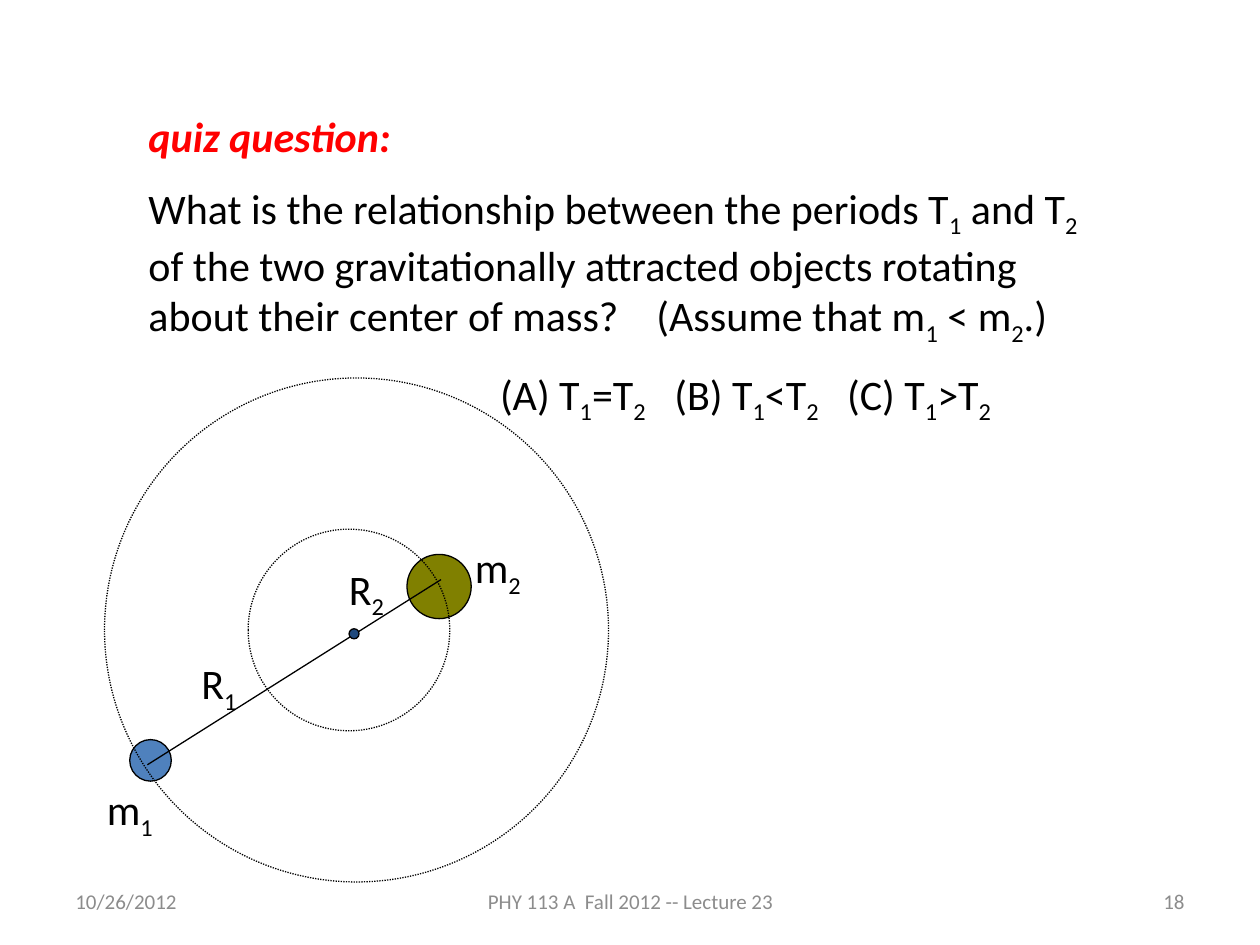
from pptx import Presentation
from pptx.dml.color import RGBColor
from pptx.enum.dml import MSO_LINE
from pptx.enum.shapes import MSO_CONNECTOR, MSO_SHAPE
from pptx.enum.text import MSO_ANCHOR, PP_ALIGN
from pptx.oxml.ns import qn
from pptx.util import Inches, Pt
from lxml import etree

DOTTED = MSO_LINE.ROUND_DOT
ELLIPSE = MSO_SHAPE.OVAL
STRAIGHT = MSO_CONNECTOR.STRAIGHT
TOP, MIDDLE = MSO_ANCHOR.TOP, MSO_ANCHOR.MIDDLE
LEFT, CENTER, RIGHT = PP_ALIGN.LEFT, PP_ALIGN.CENTER, PP_ALIGN.RIGHT

COLORS = {
    "text": "000000", "heading": "FF0000", "footer": "8C8C8C",
    "light_mass": "4F81BD", "heavy_mass": "808000", "center": "1F497D",
}
FONT = "Calibri"
ANSWER_INDENT = 2.79

# An underscore makes the next character a subscript.
HEADING = "quiz question:"
QUESTION = (
    "What is the relationship between the periods T_1 and T_2 of the two "
    "gravitationally attracted objects rotating about their center of mass?"
    "    (Assume that m_1 < m_2.)"
)
ANSWERS = "(A) T_1=T_2   (B) T_1<T_2   (C) T_1>T_2"

FOOTERS = [
    ("10/26/2012", 0.5, 2.33, LEFT),
    ("PHY 113 A  Fall 2012 -- Lecture 23", 3.42, 3.17, CENTER),
    ("18", 7.17, 2.33, RIGHT),
]
MASSES = [(1.03, 5.87, 0.33, "light_mass"), (3.23, 4.4, 0.51, "heavy_mass")]
RADIUS_LINE = (1.17, 6.07, 3.5, 4.6)
ORBITS = [(1.97, 4.2, 1.6), (0.83, 3, 4)]
CENTER_OF_MASS = (2.77, 4.99, 0.08, "center")
LABELS = [("m_1", 0.75, 6.17), ("R_2", 2.67, 4.42),
          ("R_1", 1.5, 5.17), ("m_2", 3.67, 4.25)]


def color(name):
    return RGBColor.from_string(COLORS[name])


def add_text_frame(slide, left, top, width, height, anchor=TOP):
    box = slide.shapes.add_textbox(*map(Inches, (left, top, width, height)))
    frame = box.text_frame
    frame.word_wrap = True
    frame.vertical_anchor = anchor
    return frame


def add_run(paragraph, text, size, color_name, emphasis=False, subscript=False):
    run = paragraph.add_run()
    run.text = text
    font = run.font
    font.name, font.size = FONT, Pt(size)
    font.bold = font.italic = emphasis
    font.color.rgb = color(color_name)
    if subscript:
        run._r.get_or_add_rPr().set("baseline", "-25000")


def write(paragraph, text, size=24, color_name="text", emphasis=False):
    first, *others = text.split("_")
    add_run(paragraph, first, size, color_name, emphasis)
    for piece in others:
        add_run(paragraph, piece[0], size, color_name, emphasis, subscript=True)
        if piece[1:]:
            add_run(paragraph, piece[1:], size, color_name, emphasis)


def add_circle(slide, left, top, diameter, fill_name=None):
    shape = slide.shapes.add_shape(
        ELLIPSE, *map(Inches, (left, top, diameter, diameter)))
    shape.shadow.inherit = False
    shape.line.color.rgb = color("text")
    shape.line.width = Pt(0.75)
    if fill_name:
        shape.fill.solid()
        shape.fill.fore_color.rgb = color(fill_name)
    else:
        shape.fill.background()
        shape.line.dash_style = DOTTED


def add_line(slide, points):
    line = slide.shapes.add_connector(STRAIGHT, *map(Inches, points))
    line.line.color.rgb = color("text")
    line.line.width = Pt(0.75)
    etree.SubElement(line._element.spPr, qn("a:effectLst"))


def add_question(slide):
    frame = add_text_frame(slide, 1.08, 0.83, 7.92, 2.52)
    write(frame.paragraphs[0], HEADING, color_name="heading", emphasis=True)
    for text, indent in ((QUESTION, 0), (ANSWERS, ANSWER_INDENT)):
        paragraph = frame.add_paragraph()
        paragraph.space_before = Pt(12)
        paragraph._p.get_or_add_pPr().set("marL", str(Inches(indent)))
        write(paragraph, text)


def add_orbit_diagram(slide):
    for mass in MASSES:
        add_circle(slide, *mass)
    add_line(slide, RADIUS_LINE)
    for orbit in ORBITS:
        add_circle(slide, *orbit)
    add_circle(slide, *CENTER_OF_MASS)
    for text, left, top in LABELS:
        write(add_text_frame(slide, left, top, 0.67, 0.5).paragraphs[0], text)


def main():
    presentation = Presentation()
    presentation.slide_width, presentation.slide_height = Inches(10), Inches(7.5)
    slide = presentation.slides.add_slide(presentation.slide_layouts[6])
    for text, left, width, alignment in FOOTERS:
        paragraph = add_text_frame(slide, left, 6.95, width, 0.4, MIDDLE).paragraphs[0]
        paragraph.alignment = alignment
        write(paragraph, text, 12, "footer")
    add_question(slide)
    add_orbit_diagram(slide)
    presentation.save("out.pptx")


if __name__ == "__main__":
    main()
